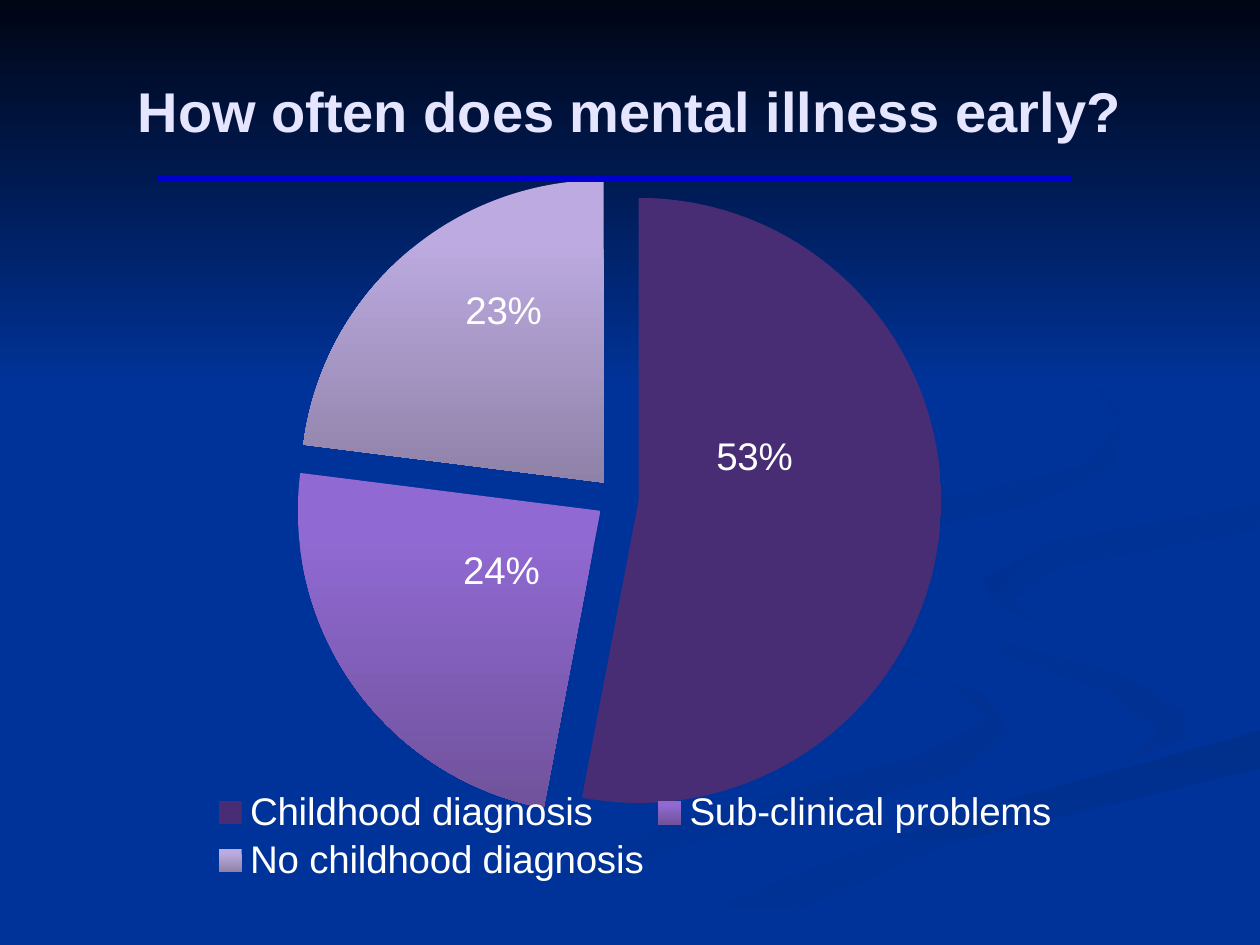
import pptx
import pptx.chart.data
import pptx.dml.color
import pptx.enum.chart
import pptx.enum.shapes
import pptx.enum.text
import pptx.oxml
import pptx.oxml.ns
import pptx.util
from pptx.util import Inches

COLORS = {
    "background": "003399", "night": "000514", "rule": "0000CC",
    "title": "E5E5FF", "text": "FFFFFF",
    "shade_light": "003193", "shade_mid": "003091", "shade_dark": "002F8C",
    "diagnosis": "482D75", "subclinical": "9069D2", "subclinical_end": "70529B",
    "none": "BCAAE0", "none_end": "8F82A8",
}
FONT = "Arial"

# Background ribbons: outline in inches, start colour, end colour, angle
RIBBONS = [
    ([(7.8, 5.5), (6.4, 5.1), (5.75, 4.6), (6, 4.95), (7.5, 5.4), (7.85, 5.7),
      (7.3, 6), (5.4, 6.5), (3, 7.5), (3.6, 7.5), (5.3, 6.75), (7.6, 6.15),
      (8, 5.8)], "background", "shade_light", 0),
    ([(9.4, 5.65), (8.9, 5.35), (7.6, 5), (7.25, 4.65), (7.55, 5.05),
      (8.8, 5.5), (9.2, 5.8), (8.95, 6.05), (9.4, 5.85)],
     "background", "shade_light", 45),
    ([(5, 7.5), (5.7, 7.5), (7.5, 6.7), (10, 6.1), (10, 5.8), (7.65, 6.45),
      (6.3, 6.95)], "shade_dark", "background", 90),
    ([(7.8, 4.6), (7.9, 4.8), (8.25, 4.95), (8.05, 4.75), (8.4, 4.5),
      (10, 4.2), (10, 4), (8.35, 4.3)], "shade_mid", "background", 45),
    ([(6.8, 4.3), (8.2, 4), (8.85, 3.7), (8.9, 3.25), (8.4, 2.75),
      (7.6, 2.35), (8.5, 2.8), (8.9, 3.35), (8.6, 3.7), (6.5, 4.2),
      (5.8, 4.5), (6.2, 5), (6, 4.55)], "shade_dark", "background", 45),
]


def rgb(name):
    return pptx.dml.color.RGBColor.from_string(COLORS[name])


def chart_xml(content):
    """Turn a chart fragment, rooted in the c: namespace, into an element."""
    tag, rest = content[1:].split(">", 1)
    return pptx.oxml.parse_xml(f'<{tag} {pptx.oxml.ns.nsdecls("c")}>{rest}')


def layout_xml(x, y, width=None, height=None, inner=False):
    parts = ['<c:layoutTarget val="inner"/>'] if inner else []
    if width:
        parts += ['<c:xMode val="edge"/>', '<c:yMode val="edge"/>']
    values = {"x": x, "y": y, "w": width, "h": height}
    parts += [f'<c:{key} val="{value}"/>' for key, value in values.items() if value is not None]
    return f'<c:layout><c:manualLayout>{"".join(parts)}</c:manualLayout></c:layout>'


def set_layout(element, position, layout):
    for old in element.findall(pptx.oxml.ns.qn("c:layout")):
        element.remove(old)
    element.insert(position, chart_xml(layout))


class SlideBuilder:
    def __init__(self, slide):
        self.slide = slide
        self.slide.background.fill.solid()
        self.slide.background.fill.fore_color.rgb = rgb("background")

    def gradient(self, fill, start, end, angle, start_at=0):
        fill.gradient()
        fill.gradient_angle = (360 - angle) % 360
        first, last = fill.gradient_stops
        first.color.rgb, last.color.rgb = rgb(start), rgb(end)
        first.position, last.position = start_at, 1

    def finish(self, shape, start, end, angle):
        self.gradient(shape.fill, start, end, angle)
        shape.line.fill.background()
        shape.shadow.inherit = False

    def ribbon(self, points, start, end, angle):
        corners = [(Inches(x), Inches(y)) for x, y in points]
        builder = self.slide.shapes.build_freeform(*corners[0], scale=1.0)
        builder.add_line_segments(corners[1:], close=True)
        self.finish(builder.convert_to_shape(), start, end, angle)

    def band(self, left, top, width, height, start, end):
        shape = self.slide.shapes.add_shape(
            pptx.enum.shapes.MSO_SHAPE.RECTANGLE,
            Inches(left), Inches(top), Inches(width), Inches(height))
        self.finish(shape, start, end, 90)

    def rule(self, left, right, y, color, width):
        line = self.slide.shapes.add_connector(
            pptx.enum.shapes.MSO_CONNECTOR.STRAIGHT,
            Inches(left), Inches(y), Inches(right), Inches(y))
        line.line.color.rgb = rgb(color)
        line.line.width = pptx.util.Pt(width)
        line._element.spPr.append(pptx.oxml.parse_xml(
            f'<a:effectLst {pptx.oxml.ns.nsdecls("a")}/>'))

    def title(self, text, left, top, width, height, size):
        box = self.slide.shapes.add_textbox(
            Inches(left), Inches(top), Inches(width), Inches(height))
        frame = box.text_frame
        frame.word_wrap = True
        frame.vertical_anchor = pptx.enum.text.MSO_ANCHOR.MIDDLE
        frame.text = text
        paragraph = frame.paragraphs[0]
        paragraph.alignment = pptx.enum.text.PP_ALIGN.CENTER
        font = paragraph.runs[0].font
        font.name, font.size, font.bold = FONT, pptx.util.Pt(size), True
        font.color.rgb = rgb("title")

    def pie(self, left, top, width, height, slices, size, explosion):
        data = pptx.chart.data.CategoryChartData(number_format="General")
        data.categories = [item[0] for item in slices]
        data.add_series("Series 1", [item[1] for item in slices])
        chart = self.slide.shapes.add_chart(
            pptx.enum.chart.XL_CHART_TYPE.PIE,
            Inches(left), Inches(top), Inches(width), Inches(height), data).chart
        chart.has_title = False
        chart.font.name, chart.font.size = FONT, pptx.util.Pt(size)
        chart.font.color.rgb = rgb("text")
        # Legend and plot area
        chart.has_legend = True
        chart.legend.position = pptx.enum.chart.XL_LEGEND_POSITION.BOTTOM
        chart.legend.include_in_layout = False
        set_layout(chart.legend._element, 1, layout_xml(0.13, 0.86, 0.74, 0.14))
        set_layout(chart._chartSpace.chart.plotArea, 0,
                   layout_xml(0.08, 0.01, 0.81, 0.9, inner=True))
        # Slices and their percentages
        plot = chart.plots[0]
        plot.vary_by_categories = True
        series = plot.series[0]
        labels = series.data_labels
        labels.show_value, labels.show_percentage = False, True
        labels.number_format, labels.number_format_is_linked = "0%", False
        labels.position = pptx.enum.chart.XL_LABEL_POSITION.CENTER
        shown = "".join(f'<c:show{part} val="{int(part == "Percent")}"/>' for part in
                        ("LegendKey", "Val", "CatName", "SerName", "Percent", "BubbleSize"))
        for index, (_, _, start, end, shift) in enumerate(slices):
            point_format = series.points[index].format
            self.gradient(point_format.fill, start, end, 90, start_at=0.2)
            point_format.line.fill.background()
            labels._element.insert(index, chart_xml(
                f'<c:dLbl><c:idx val="{index}"/>{layout_xml(*shift)}'
                f'<c:dLblPos val="ctr"/>{shown}</c:dLbl>'))
        first_point = series._element.find(pptx.oxml.ns.qn("c:dPt"))
        first_point.addprevious(chart_xml("<c:explosion></c:explosion>"))
        first_point.getprevious().set("val", str(explosion))


def main():
    presentation = pptx.Presentation()
    presentation.slide_width, presentation.slide_height = Inches(10), Inches(7.5)
    builder = SlideBuilder(presentation.slides.add_slide(presentation.slide_layouts[6]))
    # Background
    for ribbon in RIBBONS:
        builder.ribbon(*ribbon)
    builder.band(0, 0, 10, 3.08, "night", "background")
    # Chart: label, value, top colour, bottom colour, label shift
    builder.pie(0.42, 1.33, 9.24, 5.71, [
        ("Childhood diagnosis", 53, "diagnosis", "diagnosis", (-0.03, -0.08)),
        ("Sub-clinical problems", 24, "subclinical", "subclinical_end", (0.02, -0.04)),
        ("No childhood diagnosis", 23, "none", "none_end", (0, -0.08)),
    ], size=22, explosion=7)
    # Heading
    builder.rule(1.25, 8.5, 1.42, "rule", 4)
    builder.title("How often does mental illness early?", 0.5, 0.25, 9, 1.25, 32)
    presentation.save("out.pptx")


if __name__ == "__main__":
    main()
